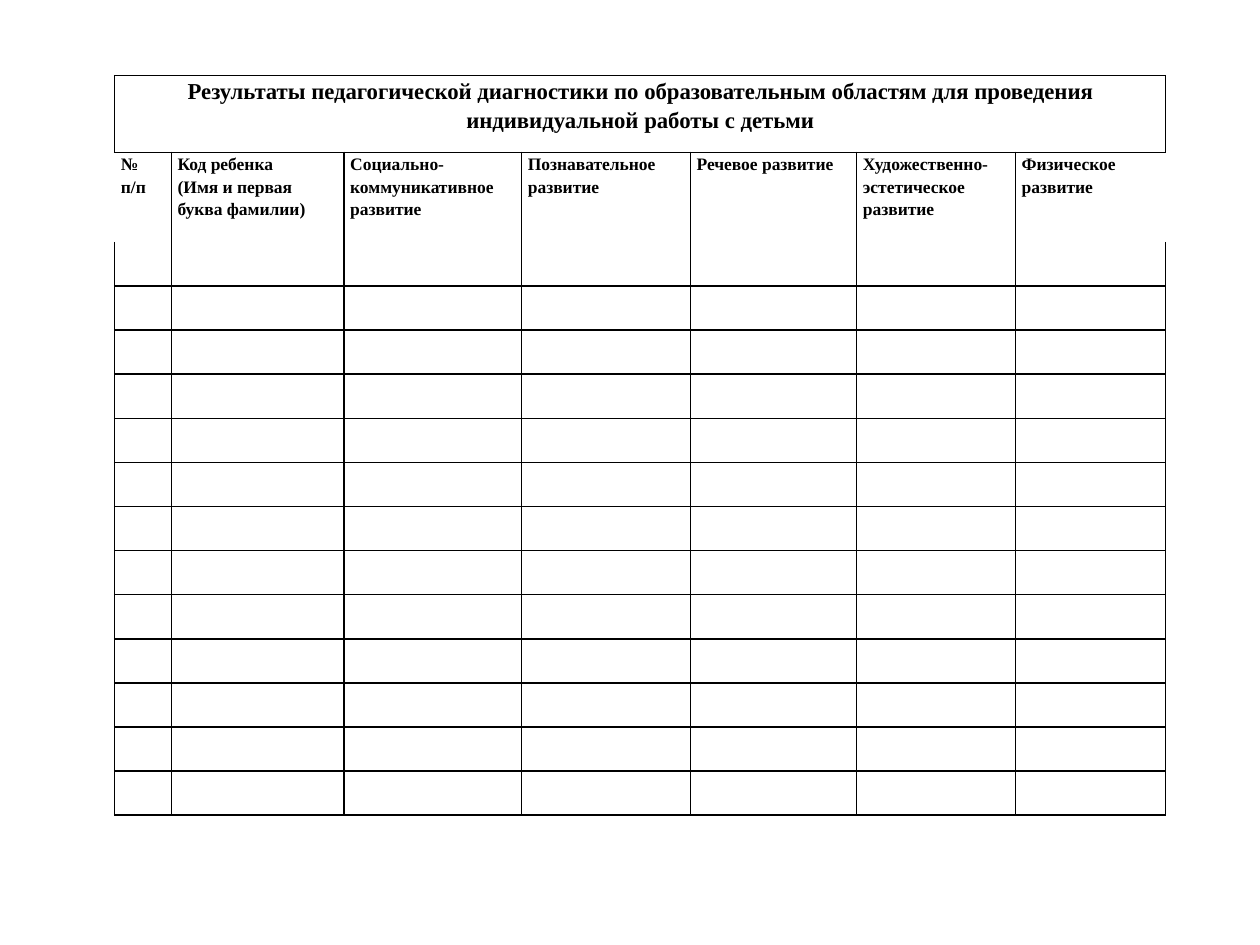
from lxml import etree
from pptx import Presentation
from pptx import util as u
from pptx.dml.color import RGBColor
from pptx.enum import text
from pptx.oxml import ns

BLACK = RGBColor(0, 0, 0)
FONT = "Times New Roman"
TITLE = ("Результаты педагогической диагностики по образовательным областям "
         "для проведения индивидуальной работы с детьми")
HEADERS = [
    "№ п/п",
    "Код ребенка\n(Имя и первая буква фамилии)",
    "Социально-коммуникативное развитие",
    "Познавательное развитие",
    "Речевое развитие",
    "Художественно-эстетическое развитие",
    "Физическое развитие",
]
COLUMN_WIDTHS = [0.45, 1.37, 1.41, 1.34, 1.32, 1.26, 1.19]
ROW_HEIGHTS = [0.61, 0.71] + [0.35] * 13


def write_text(cell, content, size=10, align=text.PP_ALIGN.LEFT):
    cell.text = content
    for paragraph in cell.text_frame.paragraphs:
        paragraph.alignment = align
        paragraph.line_spacing = 1.15
        for run in paragraph.runs:
            run.font.name = FONT
            run.font.size = u.Pt(size)
            run.font.bold = True
            run.font.color.rgb = BLACK


def set_borders(cell, visible):
    properties = cell._tc.get_or_add_tcPr()
    for side in "LRTB":
        line = etree.SubElement(properties, ns.qn(f"a:ln{side}"), w=str(u.Pt(1)))
        if side in visible:
            fill = etree.SubElement(line, ns.qn("a:solidFill"))
            etree.SubElement(fill, ns.qn("a:srgbClr"), val=str(BLACK))
        else:
            etree.SubElement(line, ns.qn("a:noFill"))


presentation = Presentation()
presentation.slide_width = u.Inches(10)
presentation.slide_height = u.Inches(7.5)
slide = presentation.slides.add_slide(presentation.slide_layouts[6])

# Table grid
frame = slide.shapes.add_table(
    len(ROW_HEIGHTS), len(COLUMN_WIDTHS), u.Inches(0.91), u.Inches(0.6),
    u.Inches(sum(COLUMN_WIDTHS)), u.Inches(sum(ROW_HEIGHTS)))
table = frame.table
table.first_row = False
table.horz_banding = False
for column, width in zip(table.columns, COLUMN_WIDTHS):
    column.width = u.Inches(width)
for row, height in zip(table.rows, ROW_HEIGHTS):
    row.height = u.Inches(height)

# Borders: the header row is open at its outer sides and at the bottom
last_column = len(COLUMN_WIDTHS) - 1
for row_index, row in enumerate(table.rows):
    for column_index, cell in enumerate(row.cells):
        visible = "LRTB"
        if row_index == 1:
            visible = "T"
            if column_index > 0:
                visible += "L"
            if column_index < last_column:
                visible += "R"
        elif row_index == 2:
            visible = "LRB"
        set_borders(cell, visible)
        cell.fill.background()
        cell.margin_left = cell.margin_right = u.Inches(0.05)
        cell.margin_top = cell.margin_bottom = 0

# Title row
table.cell(0, 0).merge(table.cell(0, last_column))
write_text(table.cell(0, 0), TITLE, size=13, align=text.PP_ALIGN.CENTER)

# Column headers
for column_index, header in enumerate(HEADERS):
    write_text(table.cell(1, column_index), header)

presentation.save("out.pptx")
